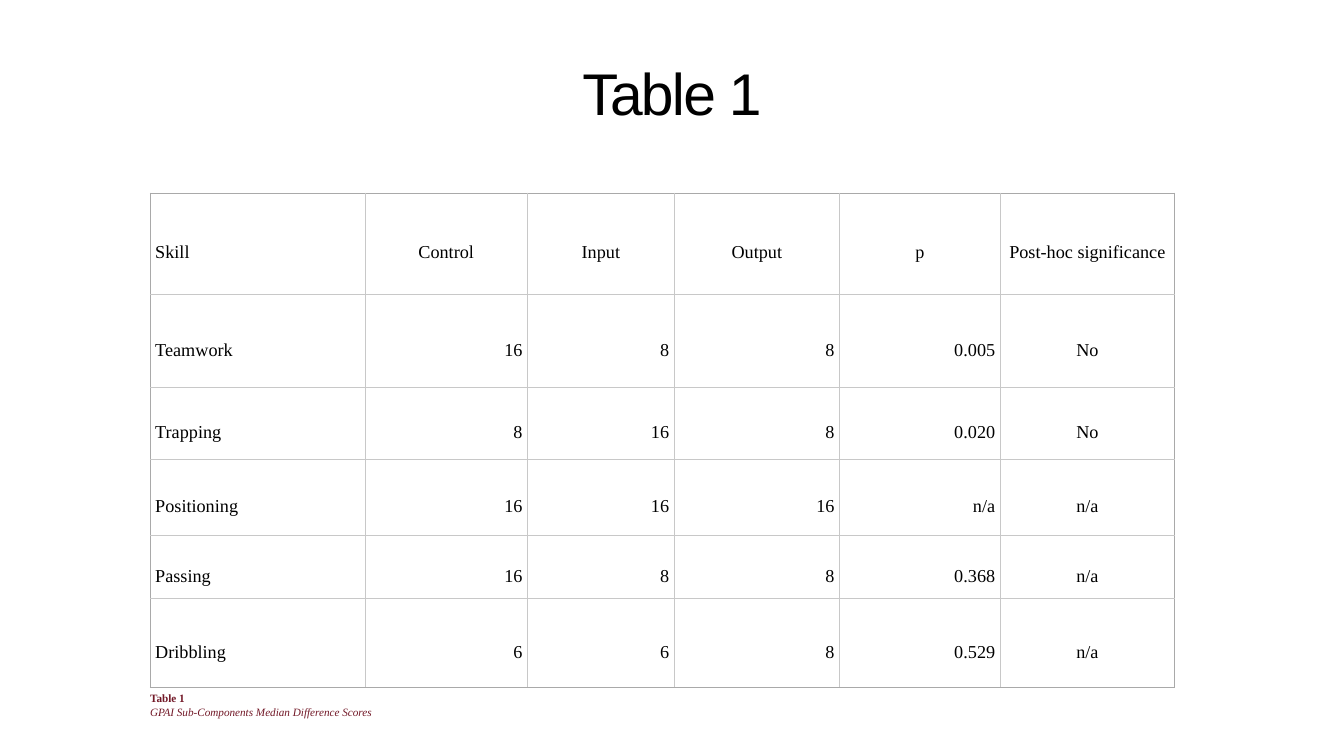
from lxml import etree
from pptx import Presentation
from pptx.dml.color import RGBColor
from pptx.enum.text import MSO_ANCHOR, MSO_AUTO_SIZE, PP_ALIGN
from pptx.oxml.ns import qn
from pptx.util import Inches, Pt

LEFT, CENTER, RIGHT = PP_ALIGN.LEFT, PP_ALIGN.CENTER, PP_ALIGN.RIGHT
TOP, MIDDLE, BOTTOM = MSO_ANCHOR.TOP, MSO_ANCHOR.MIDDLE, MSO_ANCHOR.BOTTOM
NO_FIT = MSO_AUTO_SIZE.NONE
SERIF = "Times New Roman"
INNER, OUTER = "C8C8C8", "A9A9A9"

ROWS = [
    ["Skill", "Control", "Input", "Output", "p", "Post-hoc significance"],
    ["Teamwork", "16", "8", "8", "0.005", "No"],
    ["Trapping", "8", "16", "8", "0.020", "No"],
    ["Positioning", "16", "16", "16", "n/a", "n/a"],
    ["Passing", "16", "8", "8", "0.368", "n/a"],
    ["Dribbling", "6", "6", "8", "0.529", "n/a"],
]
WIDTHS = [4.26, 3.23, 2.91, 3.28, 3.19, 3.46]
HEIGHTS = [2.01, 1.85, 1.43, 1.5, 1.26, 1.76]


def write(para, text, color, **look):
    """Add a run to the paragraph and set its font from the look values."""
    run = para.add_run()
    run.text = text
    run.font.color.rgb = RGBColor.from_string(color)
    for name, value in look.items():
        setattr(run.font, name, value)
    return run


def border(cell, colors):
    """Draw 1 pt cell edges; colors maps L, R, T, B in that order."""
    props = cell._tc.get_or_add_tcPr()
    for i, (side, color) in enumerate(colors.items()):
        line = etree.Element(qn(f"a:ln{side}"), w=str(Pt(1)))
        fill = etree.SubElement(line, qn("a:solidFill"))
        etree.SubElement(fill, qn("a:srgbClr"), val=color)
        props.insert(i, line)


prs = Presentation()
prs.slide_width, prs.slide_height = Inches(26.67), Inches(15)
slide = prs.slides.add_slide(prs.slide_layouts[5])

# Title
title = slide.shapes.title
title.left, title.top = Inches(1.39), Inches(0.87)
title.width, title.height = Inches(23.89), Inches(1.7)
frame = title.text_frame
frame.auto_size, frame.vertical_anchor = NO_FIT, BOTTOM
for side in ("left", "right", "top", "bottom"):
    setattr(frame, f"margin_{side}", Inches(0.06))
para = frame.paragraphs[0]
para.alignment, para.line_spacing = CENTER, 0.8
run = write(para, "Table 1", "000000", size=Pt(84), name="Arial")
run.font._element.set("spc", "-250")

# Score table
last_row, last_col = len(ROWS) - 1, len(WIDTHS) - 1
table = slide.shapes.add_table(
    len(ROWS), len(WIDTHS), Inches(2.98), Inches(3.83),
    Inches(sum(WIDTHS)), Inches(sum(HEIGHTS))).table
table.first_row = table.horz_banding = False
for col, width in zip(table.columns, WIDTHS):
    col.width = Inches(width)
for r, (row, height) in enumerate(zip(ROWS, HEIGHTS)):
    table.rows[r].height = Inches(height)
    for c, text in enumerate(row):
        cell = table.cell(r, c)
        cell.fill.background()
        cell.vertical_anchor = MIDDLE
        cell.margin_left = cell.margin_right = Inches(0.1)
        cell.margin_top = cell.margin_bottom = 0
        para = cell.text_frame.paragraphs[0]
        para.line_spacing = Pt(55)
        if c == 0:
            para.alignment = LEFT
        elif r == 0 or c == last_col:
            para.alignment = CENTER
        else:
            para.alignment = RIGHT
        write(para, text, "000000", size=Pt(26), name=SERIF)
        edges = {"L": c == 0, "R": c == last_col,
                 "T": r == 0, "B": r == last_row}
        border(cell, {side: OUTER if edge else INNER
                      for side, edge in edges.items()})

# Caption
box = slide.shapes.add_textbox(Inches(2.93), Inches(13.67), Inches(4.52), Inches(0.9))
frame = box.text_frame
frame.word_wrap, frame.vertical_anchor = False, TOP
for side in ("left", "right", "top", "bottom"):
    setattr(frame, f"margin_{side}", Inches(0.05))
head, note = frame.paragraphs[0], frame.add_paragraph()
head.space_before = Pt(10)
for para, text, style in (
        (head, "Table 1", "bold"),
        (note, "GPAI Sub-Components Median Difference Scores", "italic")):
    para.alignment = LEFT
    write(para, text, "721827", size=Pt(16), name=SERIF, **{style: True})

prs.save("out.pptx")
